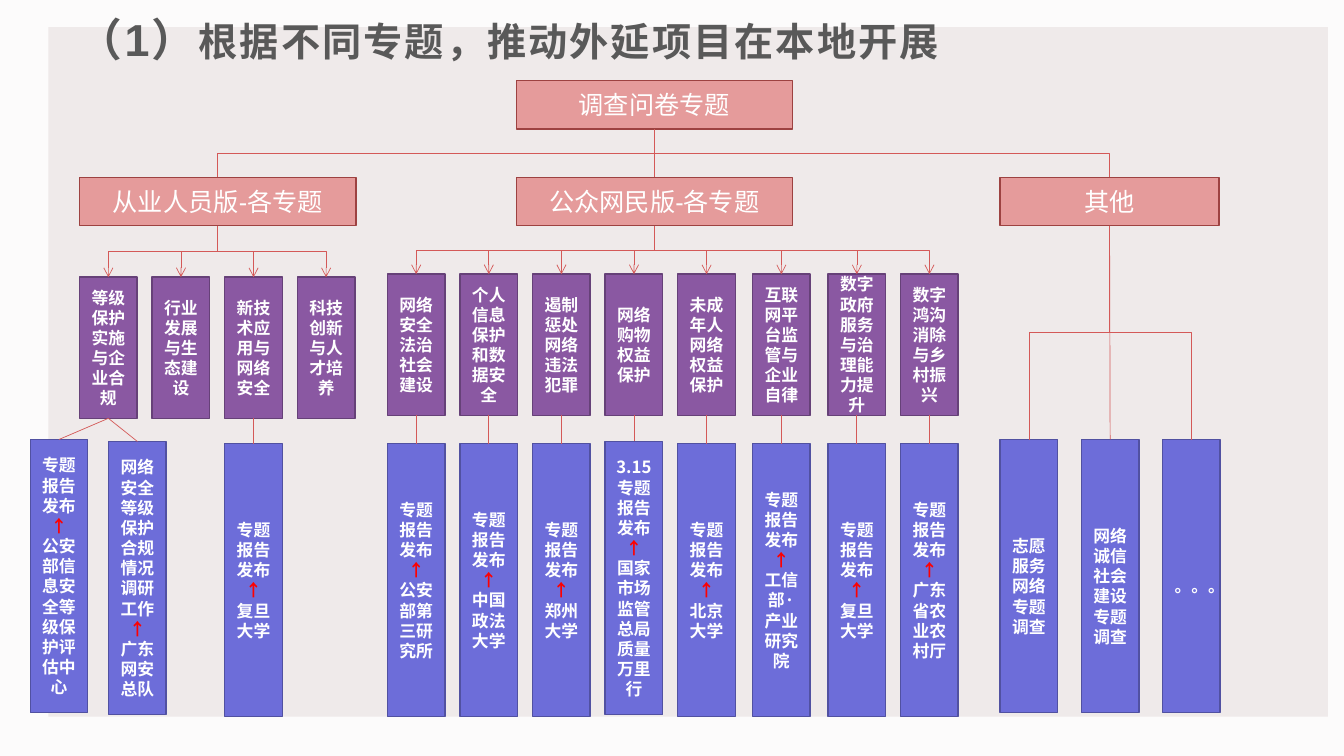
from lxml.etree import SubElement
from pptx import Presentation
from pptx.dml.color import RGBColor
from pptx.enum.shapes import MSO_CONNECTOR, MSO_SHAPE
from pptx.enum.text import MSO_ANCHOR, MSO_AUTO_SIZE, PP_ALIGN
from pptx.oxml.ns import qn
from pptx.util import Inches, Pt

COLORS = {
    "background": "FCFBFB", "panel": "EFEAEA", "title": "595959",
    "heading": "E59B9B", "heading_edge": "9D4241",
    "topic": "8A58A2", "topic_edge": "664178",
    "report": "6D6DD9", "report_edge": "5151A1",
    "link": "D45958", "text": "FFFFFF", "arrow": "FF0000",
}
SLIDE_WIDTH, SLIDE_HEIGHT = 13.33, 7.5
GRID_LEFT, COLUMN = 0.79, 0.72
CARD_WIDTH, TOPIC_HEIGHT, REPORT_HEIGHT = 0.57, 1.4, 2.71
HEADING_WIDTH, HEADING_HEIGHT = 2.74, 0.48
ROWS = {"root": 0.8, "branch": 1.76, "practitioner": 2.75, "public": 2.72,
        "report": 4.4, "raised": 4.38, "other": 4.36}
PUBLISHED = "专题报告发布\n↑\n"

PRACTITIONER_TOPICS = [
    (0, "等级保护实施与企业合规", [
        (-0.68, "other", PUBLISHED + "公安部信息安全等级保护评估中心"),
        (0.4, "raised", "网络安全等级保护合规情况调研工作\n↑\n广东\n网安总队")]),
    (1, "行业发展与生态建设", []),
    (2, "新技术应用与网络安全", [(2, "report", PUBLISHED + "复旦大学")]),
    (3, "科技创新与人才培养", []),
]
PUBLIC_TOPICS = [
    (4.24, "网络安全法治社会建设", "report", PUBLISHED + "公安部第三研究所"),
    (5.24, "个人信息保护和数据安全", "report", PUBLISHED + "中国政法大学"),
    (6.24, "遏制惩处网络违法犯罪", "report", PUBLISHED + "郑州大学"),
    (7.24, "网络购物权益保护", "raised",
     "3.15\n专题\n报告发布\n↑\n国家市场监管总局\n质量万里行"),
    (8.24, "未成年人网络权益保护", "report", PUBLISHED + "北京大学"),
    (9.27, "互联网平台监管与企业自律", "report", PUBLISHED + "工信部·\n产业研究院"),
    (10.31, "数字政府服务与治理能力提升", "report", PUBLISHED + "复旦大学"),
    (11.31, "数字鸿沟消除与乡村振兴", "report", PUBLISHED + "广东省农业农村厅"),
]
OTHER_SURVEYS = ["志愿服务网络专题调查", "网络诚信社会建设专题调查", "。。。"]
OTHER_START, OTHER_STEP = 12.68, 1.12


def rgb(role):
    return RGBColor.from_string(COLORS[role])


def column_left(column):
    return GRID_LEFT + column * COLUMN


def style_run(run, size, font, east_asian, color, bold):
    run.font.size = Pt(size)
    run.font.name = font
    run.font.bold = bold
    run.font.color.rgb = rgb(color)
    SubElement(run.font._element, qn("a:ea")).set("typeface", east_asian)


def add_panel(slide, left, top, width, height, role, edge=None):
    panel = slide.shapes.add_shape(
        MSO_SHAPE.RECTANGLE, Inches(left), Inches(top), Inches(width), Inches(height))
    panel.shadow.inherit = False
    panel.fill.solid()
    panel.fill.fore_color.rgb = rgb(role)
    if edge:
        panel.line.color.rgb = rgb(edge)
        panel.line.width = Pt(1)
    else:
        panel.line.fill.background()
    return panel


def add_label(panel, text, size, font, bold):
    frame = panel.text_frame
    frame.text = text
    frame.word_wrap = True
    frame.vertical_anchor = MSO_ANCHOR.MIDDLE
    for paragraph in frame.paragraphs:
        paragraph.alignment = PP_ALIGN.CENTER
        color = "arrow" if paragraph.text == "↑" else "text"
        for run in paragraph.runs:
            style_run(run, size, font, "Noto Sans CJK JP", color, bold)


def add_heading(slide, left, row, text, width=HEADING_WIDTH):
    heading = add_panel(slide, left, ROWS[row], width, HEADING_HEIGHT,
                        "heading", "heading_edge")
    add_label(heading, text, 18, "Arial", False)
    return heading


def add_card(slide, column, row, height, role, text):
    card = add_panel(slide, column_left(column), ROWS[row], CARD_WIDTH, height,
                     role, role + "_edge")
    add_label(card, text, 12, "Noto Sans CJK JP", True)
    return card


def add_link(slide, parent, child, elbow=False, arrow=False):
    start_x, start_y = parent.left + parent.width // 2, parent.top + parent.height
    end_x, end_y = child.left + child.width // 2, child.top
    kind = MSO_CONNECTOR.ELBOW if elbow else MSO_CONNECTOR.STRAIGHT
    link = slide.shapes.add_connector(kind, start_x, start_y, end_x, end_y)
    link.begin_connect(parent, 2)
    link.end_connect(child, 0)
    properties = link._element.spPr
    if elbow:
        drop, span = end_y - start_y, abs(end_x - start_x)
        link.left = (start_x + end_x - drop) // 2
        link.top = (start_y + end_y - span) // 2
        link.width, link.height = drop, span
        transform = properties.find(qn("a:xfrm"))
        transform.attrib.pop("flipH", None)
        transform.set("rot", "5400000")
        transform.set("flipV", "1" if end_x > start_x else "0")
    link.line.color.rgb = rgb("link")
    link.line.width = Pt(0.5)
    if arrow:
        SubElement(properties.find(qn("a:ln")), qn("a:tailEnd")).set("type", "arrow")
    SubElement(properties, qn("a:effectLst"))


def add_title(slide):
    title = slide.shapes.title
    title.left, title.top = Inches(0.67), 0
    title.width, title.height = Inches(12), Inches(0.77)
    frame = title.text_frame
    frame.text = "（1）"
    frame.auto_size = MSO_AUTO_SIZE.NONE
    frame.word_wrap = True
    frame.vertical_anchor = MSO_ANCHOR.MIDDLE
    paragraph = frame.paragraphs[0]
    paragraph.alignment = PP_ALIGN.LEFT
    paragraph.add_run().text = "根据不同专题，推动外延项目在本地开展"
    for run, size in zip(paragraph.runs, (32, 28)):
        style_run(run, size, "Arial", "Noto Sans CJK SC", "title", True)
        run.font._element.set("spc", "150")


def add_practitioner_branch(slide, heading):
    for column, topic, reports in PRACTITIONER_TOPICS:
        topic_card = add_card(slide, column, "practitioner", TOPIC_HEIGHT, "topic", topic)
        add_link(slide, heading, topic_card, elbow=True, arrow=True)
        for report_column, row, report in reports:
            report_card = add_card(slide, report_column, row, REPORT_HEIGHT, "report", report)
            add_link(slide, topic_card, report_card)


def add_public_branch(slide, heading):
    for column, topic, row, report in PUBLIC_TOPICS:
        topic_card = add_card(slide, column, "public", TOPIC_HEIGHT, "topic", topic)
        report_card = add_card(slide, column, row, REPORT_HEIGHT, "report", report)
        add_link(slide, heading, topic_card, elbow=True, arrow=True)
        add_link(slide, topic_card, report_card)


def add_other_branch(slide, heading):
    for index, survey in enumerate(OTHER_SURVEYS):
        card = add_card(slide, OTHER_START + index * OTHER_STEP, "other",
                        REPORT_HEIGHT, "report", survey)
        card.text_frame.margin_top = Inches(0.25)
        add_link(slide, heading, card, elbow=index != 1)


def main():
    presentation = Presentation()
    presentation.slide_width = Inches(SLIDE_WIDTH)
    presentation.slide_height = Inches(SLIDE_HEIGHT)
    slide = presentation.slides.add_slide(presentation.slide_layouts[5])
    slide.background.fill.solid()
    slide.background.fill.fore_color.rgb = rgb("background")
    backdrop = add_panel(slide, 0.48, 0.27, 12.69, 6.84, "panel")
    slide.shapes._spTree.insert(2, backdrop._element)
    add_title(slide)

    root = add_heading(slide, 5.12, "root", "调查问卷专题")
    practitioner = add_heading(slide, GRID_LEFT, "branch", "从业人员版-各专题")
    public = add_heading(slide, 5.12, "branch", "公众网民版-各专题")
    other = add_heading(slide, 9.92, "branch", "其他", width=2.17)
    add_link(slide, root, public)
    for branch in (practitioner, other):
        add_link(slide, root, branch, elbow=True)

    add_practitioner_branch(slide, practitioner)
    add_public_branch(slide, public)
    add_other_branch(slide, other)
    presentation.save("out.pptx")


if __name__ == "__main__":
    main()
